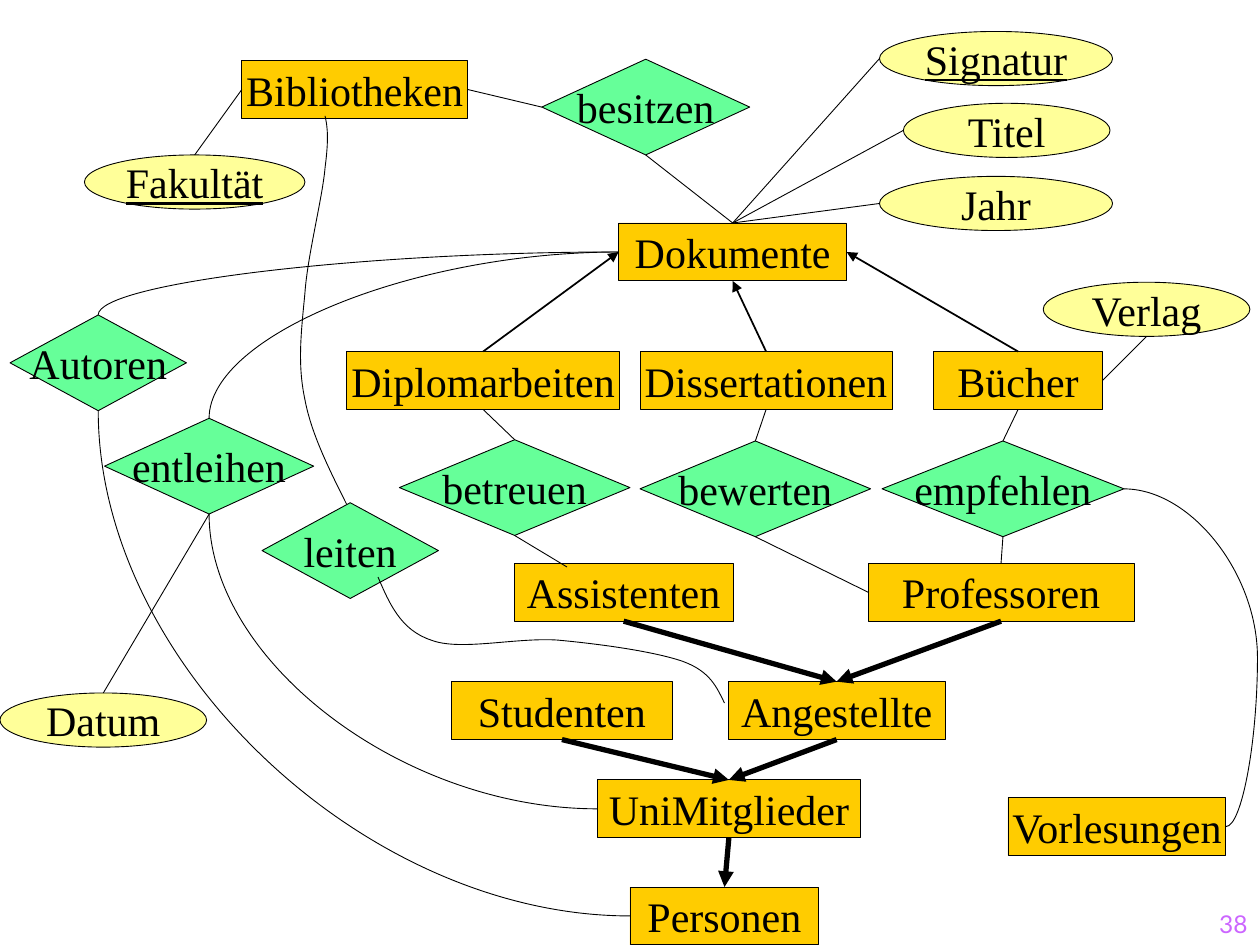
"""Build an entity-relationship slide about a university library."""
from lxml import etree
from pptx import Presentation
from pptx.dml.color import RGBColor
from pptx.enum.shapes import MSO_CONNECTOR, MSO_SHAPE
from pptx.enum.text import MSO_ANCHOR, PP_ALIGN
from pptx.oxml.ns import qn
from pptx.util import Pt

PX = 9144
STRAIGHT, CURVE = MSO_CONNECTOR.STRAIGHT, MSO_CONNECTOR.CURVE
MIDDLE, BOTTOM = MSO_ANCHOR.MIDDLE, MSO_ANCHOR.BOTTOM
CENTER, RIGHT = PP_ALIGN.CENTER, PP_ALIGN.RIGHT
COLORS = {"entity": "FFCC00", "relation": "66FF99", "attribute": "FFFF99",
          "ink": "000000", "number": "CC66FF"}
PRESETS = {"entity": MSO_SHAPE.RECTANGLE, "relation": MSO_SHAPE.DIAMOND,
           "attribute": MSO_SHAPE.OVAL}
HEIGHTS = {"entity": 46, "relation": 76, "attribute": 43}
KEYS = {"Signatur", "Fakultät"}
SIDES = {"top": (0.5, 0), "left": (0, 0.5), "bottom": (0.5, 1), "right": (1, 0.5)}
THIN, MEDIUM, THICK = 0.5, 1, 3

NODES = {
    "entity": [
        ("Bibliotheken", 192, 48, 179), ("Dokumente", 491, 177, 181),
        ("Diplomarbeiten", 275, 279, 217), ("Dissertationen", 508, 279, 200),
        ("Bücher", 741, 279, 134), ("Assistenten", 408, 447, 174),
        ("Professoren", 689, 447, 211), ("Studenten", 358, 541, 176),
        ("Angestellte", 578, 541, 172), ("UniMitglieder", 474, 619, 209),
        ("Personen", 500, 704, 150), ("Vorlesungen", 800, 633, 173)],
    "relation": [
        ("besitzen", 430, 47, 165), ("Autoren", 8, 250, 140),
        ("entleihen", 83, 332, 166), ("leiten", 208, 399, 140),
        ("betreuen", 317, 349, 183), ("bewerten", 508, 350, 183),
        ("empfehlen", 700, 350, 192)],
    "attribute": [
        ("Signatur", 698, 25, 185), ("Titel", 717, 82, 164),
        ("Jahr", 698, 140, 185), ("Verlag", 828, 224, 164),
        ("Fakultät", 67, 123, 175), ("Datum", 0, 550, 164)],
}
ROLES = [
    ("betreuen", "top", "Diplomarbeiten", "bottom"),
    ("bewerten", "top", "Dissertationen", "bottom"),
    ("empfehlen", "top", "Bücher", "bottom"),
    ("empfehlen", "bottom", "Professoren", "top"),
    ("bewerten", "bottom", "Professoren", "left"),
    ("besitzen", "bottom", "Dokumente", "top"),
    ("besitzen", "left", "Bibliotheken", "right"),
    ("Bibliotheken", "left", "Fakultät", "top"),
    ("Bücher", "right", "Verlag", "bottom"),
    ("Dokumente", "top", "Signatur", "left"),
    ("Dokumente", "top", "Titel", "left"),
    ("Dokumente", "top", "Jahr", "left"),
    ("entleihen", "bottom", "Datum", "top")]
DOCUMENT_KINDS = [
    ("Bücher", "top", "Dokumente", "right"),
    ("Dissertationen", "top", "Dokumente", "bottom"),
    ("Diplomarbeiten", "top", "Dokumente", "left")]
PERSON_KINDS = [
    ("Professoren", "Angestellte"), ("Assistenten", "Angestellte"),
    ("Studenten", "UniMitglieder"), ("Angestellte", "UniMitglieder"),
    ("UniMitglieder", "Personen")]
ARCS = [
    ("Personen", "left", "Autoren", "bottom"),
    ("UniMitglieder", "left", "entleihen", "bottom"),
    ("Dokumente", "left", "Autoren", "top"),
    ("Dokumente", "left", "entleihen", "top")]
LIBRARY_HEAD = [(275, 400), (261, 372), (247, 344), (242, 317), (236, 289),
                (239, 264), (242, 233), (244, 203), (256, 157), (258, 133),
                (261, 110), (260, 101), (258, 92)]
STAFF_HEAD = [(575, 558), (569, 546), (564, 533), (542, 525), (519, 517),
              (475, 511), (442, 508), (408, 506), (365, 517), (342, 508),
              (318, 500), (309, 479), (300, 458)]


def color(name):
    """Return the named colour."""
    return RGBColor.from_string(COLORS[name])


def put_text(shape, text, size, font, ink, align, anchor):
    """Write one formatted paragraph into a shape."""
    frame = shape.text_frame
    frame.text = text
    frame.vertical_anchor = anchor
    para = frame.paragraphs[0]
    para.alignment = align
    span = para.runs[0]
    span.font.size = Pt(size)
    span.font.name = font
    span.font.color.rgb = color(ink)
    return span


def set_line(shape, width):
    """Give a shape a black line."""
    shape.line.color.rgb = color("ink")
    shape.line.width = Pt(width)


def add_node(page, kind, name, left, top, width):
    """Add an entity, relation or attribute."""
    node = page.shapes.add_shape(PRESETS[kind], left * PX, top * PX,
                                 width * PX, HEIGHTS[kind] * PX)
    node.shadow.inherit = False
    node.fill.solid()
    node.fill.fore_color.rgb = color(kind)
    set_line(node, THIN)
    span = put_text(node, name, 24, "Times New Roman", "ink", CENTER, MIDDLE)
    frame = node.text_frame
    frame.word_wrap = False
    frame.margin_left = frame.margin_right = 0
    frame.margin_top = frame.margin_bottom = 0
    if name in KEYS:
        span.font.underline = True
    return node


def site(node, side):
    """Return the middle of one side of a node in EMU."""
    across, down = SIDES[side]
    return (round(node.left + across * node.width),
            round(node.top + down * node.height))


def add_link(page, start, end, width=THIN, arrow=False, kind=STRAIGHT):
    """Add a connector between two points."""
    link = page.shapes.add_connector(kind, *start, *end)
    set_line(link, width)
    if arrow:
        etree.SubElement(link.line._ln, qn("a:tailEnd"), type="triangle")
    etree.SubElement(link._element.spPr, qn("a:effectLst"))
    return link


def add_arc(page, start, end, preset, bend=None):
    """Add a curved connector of the given preset."""
    link = add_link(page, start, end, kind=CURVE)
    geometry = link._element.spPr.find(qn("a:prstGeom"))
    geometry.set("prst", preset)
    if bend is not None:
        guides = geometry.find(qn("a:avLst"))
        if guides is None:
            guides = etree.SubElement(geometry, qn("a:avLst"))
        etree.SubElement(guides, qn("a:gd"), name="adj1", fmla=f"val {bend}")


def add_spline(page, points):
    """Add an open curve from a start point and triples of Bézier points."""
    builder = page.shapes.build_freeform(*points[0], scale=float(PX))
    builder.add_line_segments(points[1:], close=False)
    spline = builder.convert_to_shape()
    spline.shadow.inherit = False
    spline.fill.background()
    set_line(spline, THIN)
    outline = next(spline._element.iter(qn("a:path")))
    segments = outline.findall(qn("a:lnTo"))
    for first in range(0, len(segments), 3):
        curve = etree.SubElement(outline, qn("a:cubicBezTo"))
        for segment in segments[first:first + 3]:
            curve.append(segment[0])
            outline.remove(segment)


def add_page_number(page):
    """Add the number in the lower right corner."""
    box = page.shapes.add_textbox(792 * PX, 700 * PX, 208 * PX, 50 * PX)
    box.text_frame.word_wrap = True
    put_text(box, "38", 14, "Lato", "number", RIGHT, BOTTOM)


def main():
    """Build and save the deck."""
    deck = Presentation()
    deck.slide_width, deck.slide_height = 1000 * PX, 750 * PX
    page = deck.slides.add_slide(deck.slide_layouts[6])
    add_page_number(page)
    nodes = {row[0]: add_node(page, kind, *row)
             for kind, rows in NODES.items() for row in rows}
    for first, leave, second, enter in ROLES:
        add_link(page, site(nodes[first], leave), site(nodes[second], enter))
    add_link(page, site(nodes["betreuen"], "bottom"), (450 * PX, 450 * PX))
    for first, leave, second, enter in DOCUMENT_KINDS:
        add_link(page, site(nodes[first], leave), site(nodes[second], enter),
                 MEDIUM, arrow=True)
    for special, general in PERSON_KINDS:
        add_link(page, site(nodes[special], "bottom"), site(nodes[general], "top"),
                 THICK, arrow=True)
    for first, leave, second, enter in ARCS:
        add_arc(page, site(nodes[first], leave), site(nodes[second], enter),
                "curvedConnector2")
    add_arc(page, site(nodes["empfehlen"], "right"),
            site(nodes["Vorlesungen"], "right"), "curvedConnector3", 130900)
    for points in (LIBRARY_HEAD, STAFF_HEAD):
        add_spline(page, points)
    deck.save("out.pptx")


if __name__ == "__main__":
    main()
